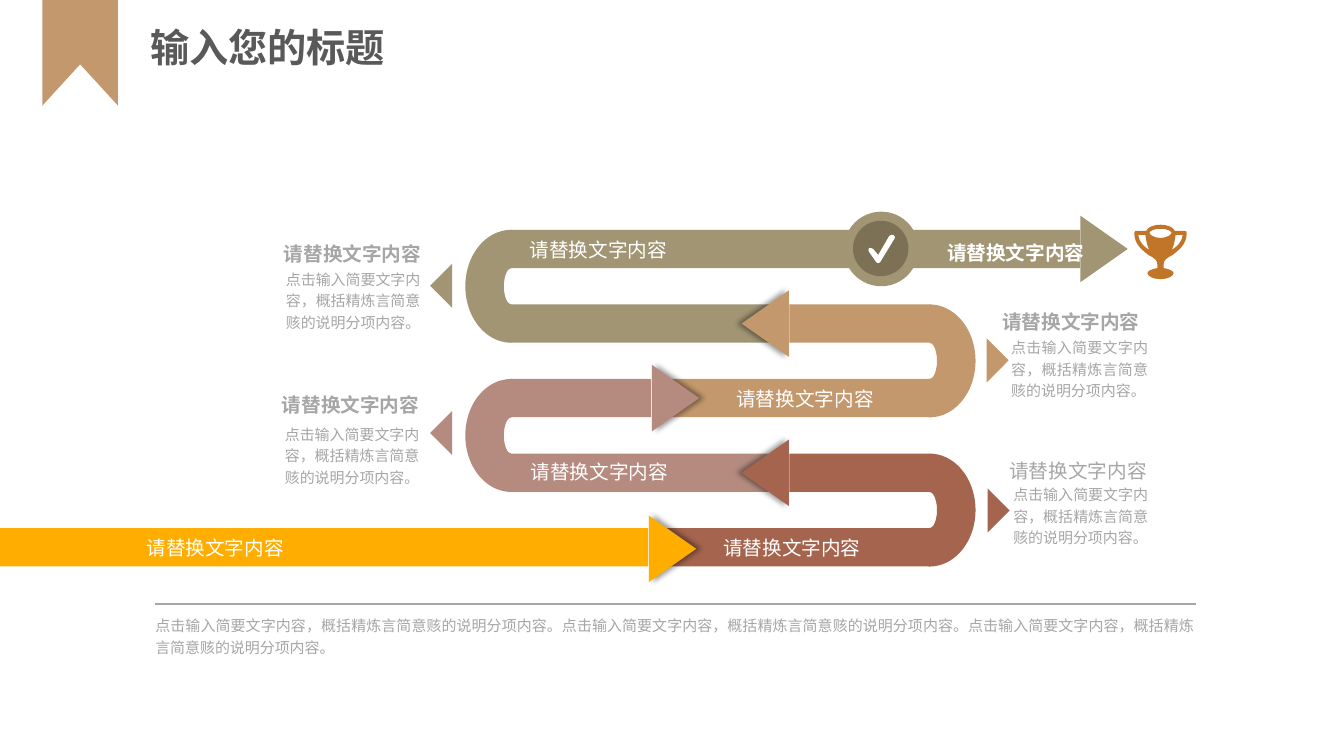
from lxml import etree
from pptx import Presentation
from pptx import util as u
from pptx.dml import color
from pptx.enum import shapes as sh, text as tx
from pptx.oxml import ns

HUE = {"olive": "A19574", "tan": "C3986D", "pink": "B58B80", "red": "A5644E",
       "gold": "FFAE00", "dark": "7C7154", "cup": "C17529", "title": "595959",
       "grey": "A6A6A6", "white": "FFFFFF"}
KIND = sh.MSO_SHAPE
ALIGN = tx.PP_ALIGN
CJK = "Noto Sans CJK SC"
LATIN = "Roboto Condensed"
HEAD = "请替换文字内容"
BODY = "点击输入简要文字内容，概括精炼言简意赅的说明分项内容。"

# Road grid: five rows, a bend at each side
TOP, PITCH, THICK = 2.28, 0.74, 0.38
LEFT, RIGHT = 5.06, 9.23


def rgb(hue):
    return color.RGBColor.from_string(HUE[hue])


def paint(shape, hue):
    shape.shadow.inherit = False
    shape.fill.solid()
    shape.fill.fore_color.rgb = rgb(hue)
    shape.line.fill.background()
    return shape


def block(slide, kind, x, y, w, h, hue, turn=0):
    shape = slide.shapes.add_shape(kind, *map(u.Inches, (x, y, w, h)))
    shape.rotation = turn
    return paint(shape, hue)


def write(slide, words, x, y, w, h, hue="grey", size=14, bold=False,
          align=ALIGN.LEFT, wrap=False, name=LATIN, space=1.2):
    box = slide.shapes.add_textbox(*map(u.Inches, (x, y, w, h)))
    frame = box.text_frame
    frame.margin_left = frame.margin_right = 0
    frame.margin_top = frame.margin_bottom = 0
    frame.vertical_anchor = tx.MSO_ANCHOR.MIDDLE
    frame.word_wrap = wrap
    frame.auto_size = tx.MSO_AUTO_SIZE.SHAPE_TO_FIT_TEXT
    para = frame.paragraphs[0]
    para.text = words
    para.alignment, para.line_spacing = align, space
    font = para.font
    font.size, font.bold, font.name = u.Pt(size), bold, name
    font.color.rgb = rgb(hue)
    east = etree.SubElement(font._element, ns.qn("a:ea"))
    east.set("typeface", CJK)


def cast(shape, angle):
    """Soft shadow under an arrowhead, thrown towards the angle."""
    box = shape._element.spPr.find(ns.qn("a:effectLst"))
    glow = etree.SubElement(box, ns.qn("a:outerShdw"), blurRad=str(u.Pt(4)),
                            dist=str(u.Pt(3)), dir=str(angle * 60000),
                            algn="ctr", rotWithShape="0")
    tint = etree.SubElement(glow, ns.qn("a:srgbClr"), val="000000")
    etree.SubElement(tint, ns.qn("a:alpha"), val="40000")


# Curved outlines, in hundredths of an inch.
# A loop is a list of steps: a point, then lines (2 numbers) or curves (6).
def pairs(step):
    return list(zip(step[::2], step[1::2]))


def flip(loop):
    """The loop mirrored across x = 0 and walked backwards."""
    flat = [(-x, y) for step in loop for x, y in pairs(step)][::-1]
    out, at = [flat[0]], 1
    for step in loop[:0:-1]:
        count = len(step) // 2
        out.append(sum(flat[at:at + count], ()))
        at += count
    return out


def outline(slide, x, y, loops, hue):
    ends = [step[-2:] for loop in loops for step in loop]
    pen = slide.shapes.build_freeform(*ends[0], scale=u.Inches(0.01))
    pen.add_line_segments(ends[1:])
    shape = paint(pen.convert_to_shape(u.Inches(x), u.Inches(y)), hue)
    left, top = (min(axis) for axis in zip(*ends))
    track = next(shape._element.iter(ns.qn("a:path")))
    for old in list(track):
        track.remove(old)
    for loop in loops:
        for i, step in enumerate(loop):
            verb = "moveTo" if i == 0 else "lnTo" if len(step) == 2 else "cubicBezTo"
            node = etree.SubElement(track, ns.qn("a:" + verb))
            for px, py in pairs(step):
                etree.SubElement(node, ns.qn("a:pt"), x=str(px - left), y=str(py - top))
        etree.SubElement(track, ns.qn("a:close"))


def trophy(slide, x, y):
    body = [(0, 0), (8, 0, 13, 3, 14, 6), (24, 6), (25, 6, 26, 7, 26, 8),
            (26, 20, 18, 25, 12, 30), (6, 33, 3, 35, 3, 40), (3, 43),
            (9, 44, 13, 46, 13, 48), (13, 51, 7, 54, 0, 54)]
    mouth = [(0, 4), (8, 4, 11, 7, 11, 8), (11, 9, 8, 13, 0, 13)]
    grip = [(11, 25), (13, 22, 14, 17, 15, 10), (22, 10), (21, 18, 16, 22, 11, 25)]
    loops = [body + flip(body)[1:], mouth + flip(mouth)[1:], grip, flip(grip)]
    outline(slide, x, y, loops, "cup")


def badge(slide, x, y):
    block(slide, KIND.OVAL, x, y, 0.74, 0.74, "olive")
    block(slide, KIND.OVAL, x + 0.09, y + 0.09, 0.55, 0.55, "dark")
    tick = [(10, 28), (9, 28, 8, 27, 8, 27), (1, 17), (0, 16, 0, 14, 1, 13),
            (2, 13, 4, 13, 5, 14), (10, 20), (21, 1), (22, 0, 24, 0, 25, 0),
            (27, 1, 27, 3, 26, 4), (12, 27), (12, 27, 11, 28, 10, 28)]
    outline(slide, x + 0.24, y + 0.23, [tick], "white")


# Road
def level(row):
    return TOP + PITCH * row


def lane(slide, row, start, end, hue):
    block(slide, KIND.RECTANGLE, start, level(row), end - start, THICK, hue)


def arrow(slide, row, mid, hue, angle, shade=True):
    wide, deep = 0.66, 0.47
    head = block(slide, KIND.ISOSCELES_TRIANGLE, mid - wide / 2,
                 level(row) + (THICK - deep) / 2, wide, deep, hue, angle + 90)
    if shade:
        cast(head, angle)


def bend(slide, row, x, hue, turn):
    """Half ring joining a row to the one below it."""
    span, deep = PITCH + THICK, 0.91
    arc = block(slide, KIND.BLOCK_ARC, x - span / 2,
                level(row) + (span - deep) / 2, span, deep, hue, turn)
    for i, value in enumerate((108, 0.56, 0.42)):
        arc.adjustments[i] = value


def road(slide):
    # hue, upper row, far end above, far end below, head centre, head angle
    turns = [("olive", 0, 10.71, 7.81, 10.95, 0), ("tan", 1, 7.83, 6.48, 7.59, 180),
             ("pink", 2, 6.46, 7.81, 6.7, 0), ("red", 3, 7.83, 6.48, 7.59, 180)]
    for hue, row, above, below, mid, angle in turns:
        side, turn, lap = (RIGHT, 90, -0.01) if angle else (LEFT, 270, 0.01)
        lane(slide, row + 1, min(side, below), max(side, below), hue)
        bend(slide, row, side + lap, hue, turn)
        lane(slide, row, min(side, above), max(side, above), hue)
        arrow(slide, row, mid, hue, angle, shade=row > 0)
    lane(slide, 4, 0, 6.43, "gold")
    arrow(slide, 4.02, 6.67, "gold", 0)
    badge(slide, 8.37, 2.1)
    trophy(slide, 11.51, 2.23)
    # Lane labels
    for x, y, bold in ((9.39, 2.35, True), (5.25, 2.32, False), (7.3, 3.8, False),
                       (5.26, 4.53, False), (1.45, 5.28, False), (7.17, 5.28, False)):
        write(slide, HEAD, x, y, 1.37, 0.26, "white", bold=bold, align=ALIGN.CENTER)


# Side notes
def note(slide, head, body, mark, hue, left, bold=True):
    write(slide, HEAD, *head, 1.37, 0.26, bold=bold,
          align=ALIGN.RIGHT if left else ALIGN.LEFT)
    write(slide, BODY, *body, 0.65, size=10.7, wrap=True,
          align=ALIGN.RIGHT if left else ALIGN.JUSTIFY)
    block(slide, KIND.RIGHT_TRIANGLE, *mark, 0.31, 0.31, hue, 45 if left else 225)


def title(slide):
    block(slide, KIND.RECTANGLE, 0.42, -0.01, 0.75, 1.06, "tan")
    block(slide, KIND.ISOSCELES_TRIANGLE, 0.42, 0.64, 0.75, 0.41, "white")
    write(slide, "输入您的标题", 1.49, 0.23, 2.91, 0.47, "title", 28, True,
          wrap=True, name=CJK, space=1)


def footer(slide, x, y, w):
    rule = slide.shapes.add_connector(sh.MSO_CONNECTOR.STRAIGHT,
                                      *map(u.Inches, (x, y, x + w, y)))
    rule.line.color.rgb, rule.line.width = rgb("grey"), u.Pt(1.5)
    etree.SubElement(rule._element.spPr, ns.qn("a:effectLst"))
    write(slide, BODY * 3, x, y + 0.1, w, 0.41, size=10.7, wrap=True,
          align=ALIGN.JUSTIFY)


def main():
    deck = Presentation()
    deck.slide_width, deck.slide_height = u.Inches(13.33), u.Inches(7.5)
    slide = deck.slides.add_slide(deck.slide_layouts[6])
    title(slide)
    footer(slide, 1.54, 5.99, 10.32)
    note(slide, (2.81, 2.36), (2.72, 2.64, 1.45), (4.33, 2.68), "olive", True)
    note(slide, (2.79, 3.86), (2.72, 4.18, 1.44), (4.33, 4.14), "pink", True)
    note(slide, (9.94, 3.04), (10.03, 3.32, 1.36), (9.63, 3.42), "tan", False)
    note(slide, (10.01, 4.52), (10.05, 4.78, 1.34), (9.64, 4.91), "red", False, bold=False)
    road(slide)
    deck.save("out.pptx")


if __name__ == "__main__":
    main()
